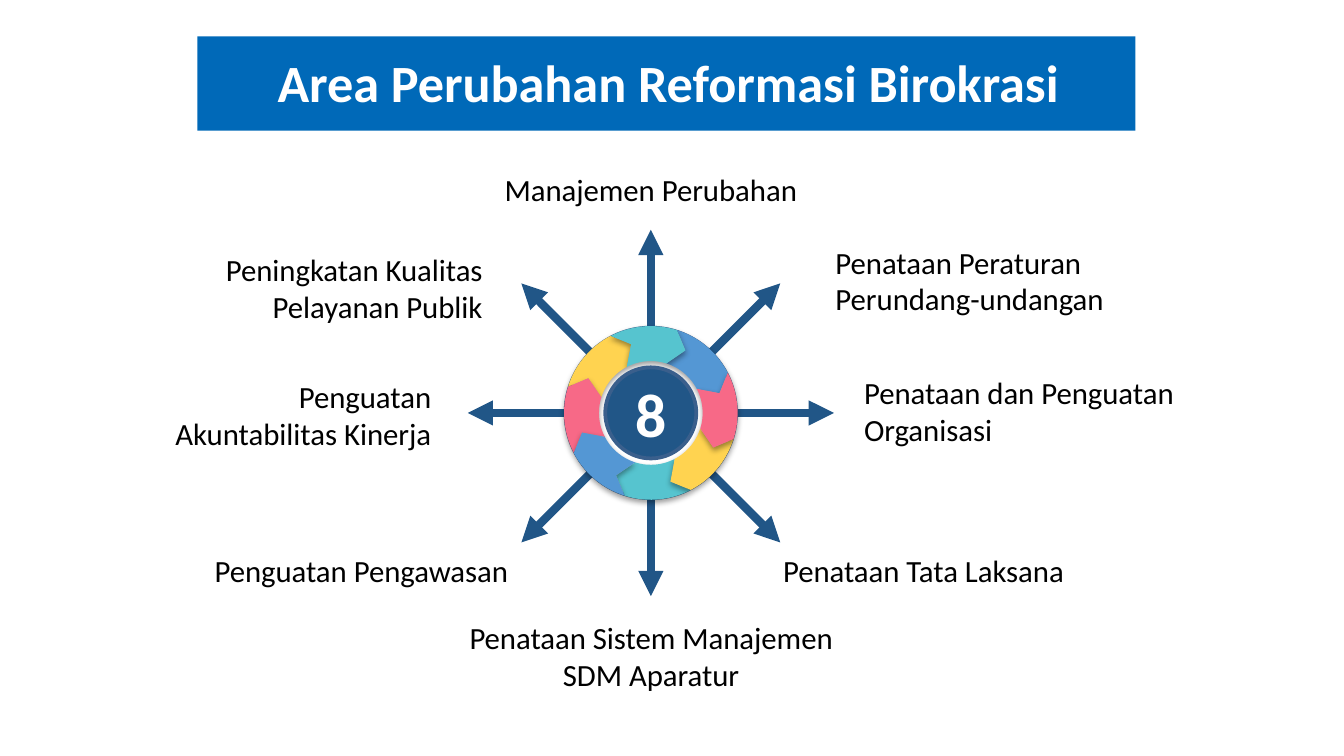
import math

import pptx
import pptx.dml.color
import pptx.enum.shapes
import pptx.enum.text
import pptx.oxml
import pptx.oxml.ns
import pptx.util

Cm = pptx.util.Cm
Pt = pptx.util.Pt
Align = pptx.enum.text.PP_ALIGN
Anchor = pptx.enum.text.MSO_ANCHOR
Kind = pptx.enum.shapes.MSO_SHAPE

TITLE = "Area Perubahan Reformasi Birokrasi"
HUB_NUMBER = "8"
AREAS = [
    ("Manajemen Perubahan", Align.CENTER, 9.25, 3.1, 6.1, 0.97),
    ("Penataan Peraturan Perundang-undangan", Align.LEFT, 15.54, 4.47, 7.37, 1.68),
    ("Penataan dan Penguatan Organisasi", Align.LEFT, 16.08, 6.93, 6.83, 1.68),
    ("Penataan Tata Laksana", Align.LEFT, 14.55, 10.29, 5.87, 0.97),
    ("Penataan Sistem Manajemen SDM Aparatur", Align.CENTER, 8.33, 11.56, 7.95, 1.68),
    ("Penguatan Pengawasan", Align.RIGHT, 3.73, 10.29, 6.12, 0.97),
    ("Penguatan Akuntabilitas Kinerja", Align.RIGHT, 2.74, 7.01, 5.66, 1.68),
    ("Peningkatan Kualitas Pelayanan Publik", Align.RIGHT, 1.57, 4.62, 7.8, 1.68),
]
SEGMENT_COLOURS = ["56C4CF", "5497D4", "F76987", "FFD350"]
STACKING = [7, 6, 1, 4, 5, 3, 0, 2]

NAVY, RIM, BANNER, WHITE, BLACK = "215687", "3A5F8C", "0069B8", "FFFFFF", "000000"
CENTRE_X, CENTRE_Y = 12.3, 7.8
DISC_RADIUS, HUB_RADIUS, ARROW_REACH = 1.61, 0.86, 3.46
OUTER, MIDDLE, INNER = 1.64, 1.35, 0.98
STEP, FIRST_EDGE, POINT_LEAD = 45, -27.5, 11.5
ARC_PARTS = 15
ONE_LINE = 1

SHADOW = (
    '<a:outerShdw %s blurRad="39370" dist="20320" dir="5400000" rotWithShape="0">'
    '<a:srgbClr val="000000"><a:alpha val="38000"/></a:srgbClr></a:outerShdw>'
    % pptx.oxml.ns.nsdecls("a")
)
ARROWHEAD = '<a:tailEnd %s type="triangle"/>' % pptx.oxml.ns.nsdecls("a")
NO_EFFECTS = "<a:effectLst %s/>" % pptx.oxml.ns.nsdecls("a")


def colour(value):
    return pptx.dml.color.RGBColor.from_string(value)


def write(shape, text, size=16.5, ink=BLACK, bold=False, align=Align.LEFT,
          anchor=Anchor.TOP, wrap=True):
    frame = shape.text_frame
    frame.word_wrap = wrap
    frame.auto_size = pptx.enum.text.MSO_AUTO_SIZE.NONE
    frame.vertical_anchor = anchor
    frame.text = text
    paragraph = frame.paragraphs[0]
    paragraph.alignment = align
    font = paragraph.runs[0].font
    font.name, font.size, font.bold = "Calibri", Pt(size), bold
    font.color.rgb = colour(ink)


def paint(shape, fill, rim=None):
    shape.shadow.inherit = False
    shape.fill.solid()
    shape.fill.fore_color.rgb = colour(fill)
    if rim:
        shape.line.color.rgb = colour(rim)
        shape.line.width = Pt(2)
    else:
        shape.line.fill.background()


def polar(angle, radius):
    turn = math.radians(angle)
    return (Cm(CENTRE_X + radius * math.sin(turn)),
            Cm(CENTRE_Y - radius * math.cos(turn)))


def add_disc(shapes, radius, fill):
    disc = shapes.add_shape(Kind.FLOWCHART_CONNECTOR, Cm(CENTRE_X - radius),
                            Cm(CENTRE_Y - radius), Cm(2 * radius), Cm(2 * radius))
    paint(disc, fill, RIM)
    return disc


def add_arrow(shapes, angle):
    arrow = shapes.add_connector(pptx.enum.shapes.MSO_CONNECTOR.STRAIGHT,
                                 *polar(angle, DISC_RADIUS), *polar(angle, ARROW_REACH))
    arrow.line.color.rgb = colour(NAVY)
    arrow.line.width = Pt(4.5)
    properties = arrow.element.spPr
    properties.find(pptx.oxml.ns.qn("a:ln")).append(pptx.oxml.parse_xml(ARROWHEAD))
    properties.append(pptx.oxml.parse_xml(NO_EFFECTS))


def add_segment(shapes, position):
    start = FIRST_EDGE + STEP * position
    end = start + STEP
    sweep = [start + STEP * part / ARC_PARTS for part in range(ARC_PARTS + 1)]
    outline = [polar(angle, OUTER) for angle in sweep]
    outline.append(polar(end + POINT_LEAD, MIDDLE))
    outline += [polar(angle, INNER) for angle in reversed(sweep)]
    outline.append(polar(start + POINT_LEAD, MIDDLE))
    builder = shapes.build_freeform(*outline[0])
    builder.add_line_segments(outline[1:], close=True)
    segment = builder.convert_to_shape()
    paint(segment, SEGMENT_COLOURS[position % len(SEGMENT_COLOURS)])
    effects = segment.element.spPr.find(pptx.oxml.ns.qn("a:effectLst"))
    effects.append(pptx.oxml.parse_xml(SHADOW))


def main():
    deck = pptx.Presentation()
    deck.slide_width, deck.slide_height = Cm(25.4), Cm(14.28)
    slide = deck.slides.add_slide(deck.slide_layouts[5])
    shapes = slide.shapes

    banner = shapes.add_shape(Kind.RECTANGLE, Cm(3.73), Cm(0.69), Cm(17.73), Cm(1.78))
    paint(banner, BANNER)

    add_disc(shapes, DISC_RADIUS, WHITE)
    for position in range(len(AREAS)):
        add_arrow(shapes, STEP * position)

    for area, align, left, top, width, height in AREAS:
        label = shapes.add_textbox(Cm(left), Cm(top), Cm(width), Cm(height))
        write(label, area, align=align, wrap=height > ONE_LINE)

    for position in STACKING:
        add_segment(shapes, position)

    hub = add_disc(shapes, HUB_RADIUS, NAVY)
    write(hub, HUB_NUMBER, size=33, ink=WHITE, bold=True, align=Align.CENTER,
          anchor=Anchor.MIDDLE, wrap=False)

    title = shapes.title
    title.left, title.top, title.width, title.height = Cm(2.92), Cm(0.81), Cm(19.41), Cm(1.45)
    write(title, TITLE, size=28, ink=WHITE, bold=True, align=Align.CENTER,
          anchor=Anchor.MIDDLE)
    title.element.getparent().append(title.element)

    deck.save("out.pptx")


if __name__ == "__main__":
    main()
